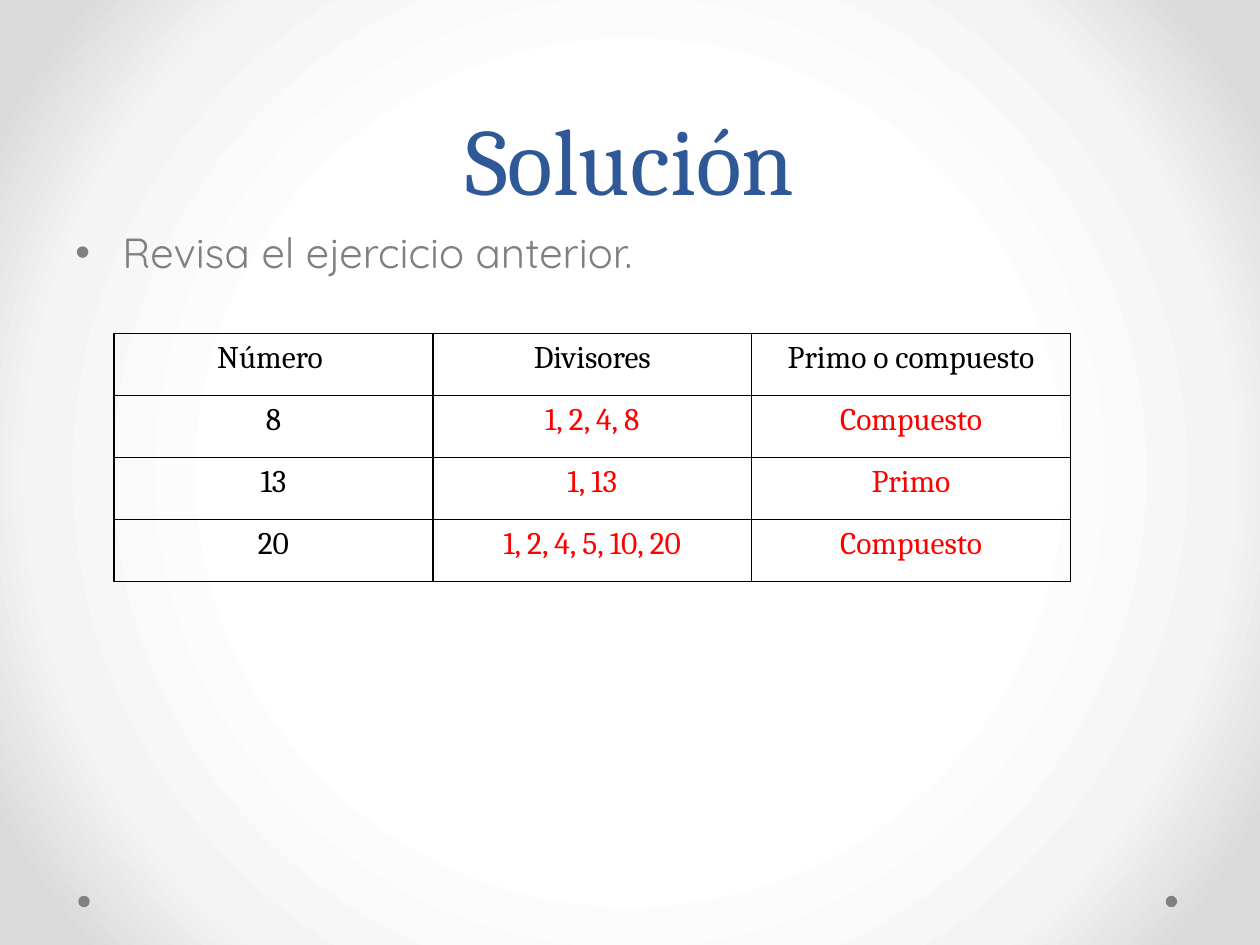
import dataclasses

import lxml.etree
import pptx
import pptx.dml.color
import pptx.enum.shapes
import pptx.enum.text
import pptx.oxml
import pptx.oxml.ns
import pptx.util
from pptx.util import Cm

GRAY, BLUE, BLACK, RED = "808080", "2F5897", "000000", "FF0000"
CENTER = pptx.enum.text.PP_ALIGN.CENTER
TOP = pptx.enum.text.MSO_ANCHOR.TOP
BOTTOM = pptx.enum.text.MSO_ANCHOR.BOTTOM
BACKDROP_STOPS = [(50, "FFFFFF"), (76, "F4F4F4"), (92, "DADADA")]
ROWS = [
    ("Número ", "Divisores", "Primo o compuesto"),
    ("8", "1, 2, 4, 8", "Compuesto"),
    ("13", "1, 13", "Primo"),
    ("20", "1, 2, 4, 5, 10, 20", "Compuesto"),
]


@dataclasses.dataclass
class Area:
    left: float
    top: float
    width: float
    height: float

    def lengths(self) -> tuple:
        return Cm(self.left), Cm(self.top), Cm(self.width), Cm(self.height)


TITLE = Area(1.27, 0, 22.86, 4.45)
BODY = Area(1.27, 4.45, 22.86, 12.57)
TABLE = Area(2.3, 6.72, 19.28, 5)
DOTS = [Area(left, 18.06, 0.23, 0.23) for left in (23.5, 1.58)]


def color(value: str) -> pptx.dml.color.RGBColor:
    return pptx.dml.color.RGBColor.from_string(value)


def add_element(parent, tag: str, **attributes):
    element = lxml.etree.SubElement(parent, pptx.oxml.ns.qn(tag))
    for name, value in attributes.items():
        element.set(name, str(value))
    return element


def paint_backdrop(slide) -> None:
    """Fill the background with a gradient that spreads from the centre."""
    fill = slide.background.fill
    fill.gradient()
    gradient = slide.background._cSld.find(".//" + pptx.oxml.ns.qn("a:gradFill"))
    for child in list(gradient):
        gradient.remove(child)
    stops = add_element(gradient, "a:gsLst")
    for percent, value in BACKDROP_STOPS:
        stop = add_element(stops, "a:gs", pos=percent * 1000)
        add_element(stop, "a:srgbClr", val=value)
    spread = add_element(gradient, "a:path", path="circle")
    add_element(spread, "a:fillToRect", l=50000, t=50000, r=50000, b=50000)


def write(frame, text: str, *, size: float, font: str, value: str,
          align=None, anchor=TOP):
    """Put formatted text in a text frame and return its paragraph."""
    frame.word_wrap = True
    frame.vertical_anchor = anchor
    para = frame.paragraphs[0]
    para.alignment = align
    span = para.add_run()
    span.text = text
    span.font.size = pptx.util.Pt(size)
    span.font.name = font
    span.font.color.rgb = color(value)
    return para


def add_bullet(para, indent: float) -> None:
    properties = para._p.get_or_add_pPr()
    properties.set("marL", str(Cm(indent)))
    properties.set("indent", str(-Cm(indent)))
    add_element(properties, "a:buFont", typeface="Arial")
    add_element(properties, "a:buChar", char="•")


def add_dot(slide, area: Area) -> None:
    dot = slide.shapes.add_shape(pptx.enum.shapes.MSO_SHAPE.OVAL, *area.lengths())
    dot.shadow.inherit = False
    dot.fill.solid()
    dot.fill.fore_color.rgb = color(GRAY)
    dot.line.fill.background()


def add_borders(cell) -> None:
    properties = cell._tc.get_or_add_tcPr()
    for side in ("a:lnL", "a:lnR", "a:lnT", "a:lnB"):
        line = add_element(properties, side, w=pptx.util.Pt(1))
        add_element(add_element(line, "a:solidFill"), "a:srgbClr", val=BLACK)


def add_solution_table(slide) -> None:
    table = slide.shapes.add_table(len(ROWS), len(ROWS[0]), *TABLE.lengths()).table
    table.first_row = table.horz_banding = False
    for row, texts in enumerate(ROWS):
        for column, text in enumerate(texts):
            cell = table.cell(row, column)
            is_answer = row > 0 and column > 0
            write(cell.text_frame, text, size=18, font="Cambria",
                  value=RED if is_answer else BLACK, align=CENTER)
            add_borders(cell)
            cell.fill.background()


def main() -> None:
    deck = pptx.Presentation()
    deck.slide_width, deck.slide_height = Cm(25.4), Cm(19.05)
    slide = deck.slides.add_slide(deck.slide_layouts[6])
    paint_backdrop(slide)
    for area in DOTS:
        add_dot(slide, area)

    title_box = slide.shapes.add_textbox(*TITLE.lengths())
    para = write(title_box.text_frame, "Solución", size=54, font="Cambria",
                 value=BLUE, align=CENTER, anchor=BOTTOM)
    para.line_spacing = pptx.util.Pt(58)

    body_box = slide.shapes.add_textbox(*BODY.lengths())
    para = write(body_box.text_frame, "Revisa el ejercicio anterior.", size=24,
                 font="Quicksand", value=GRAY)
    para.space_before = pptx.util.Pt(4.8)
    add_bullet(para, 0.95)

    add_solution_table(slide)
    deck.save("out.pptx")


if __name__ == "__main__":
    main()
